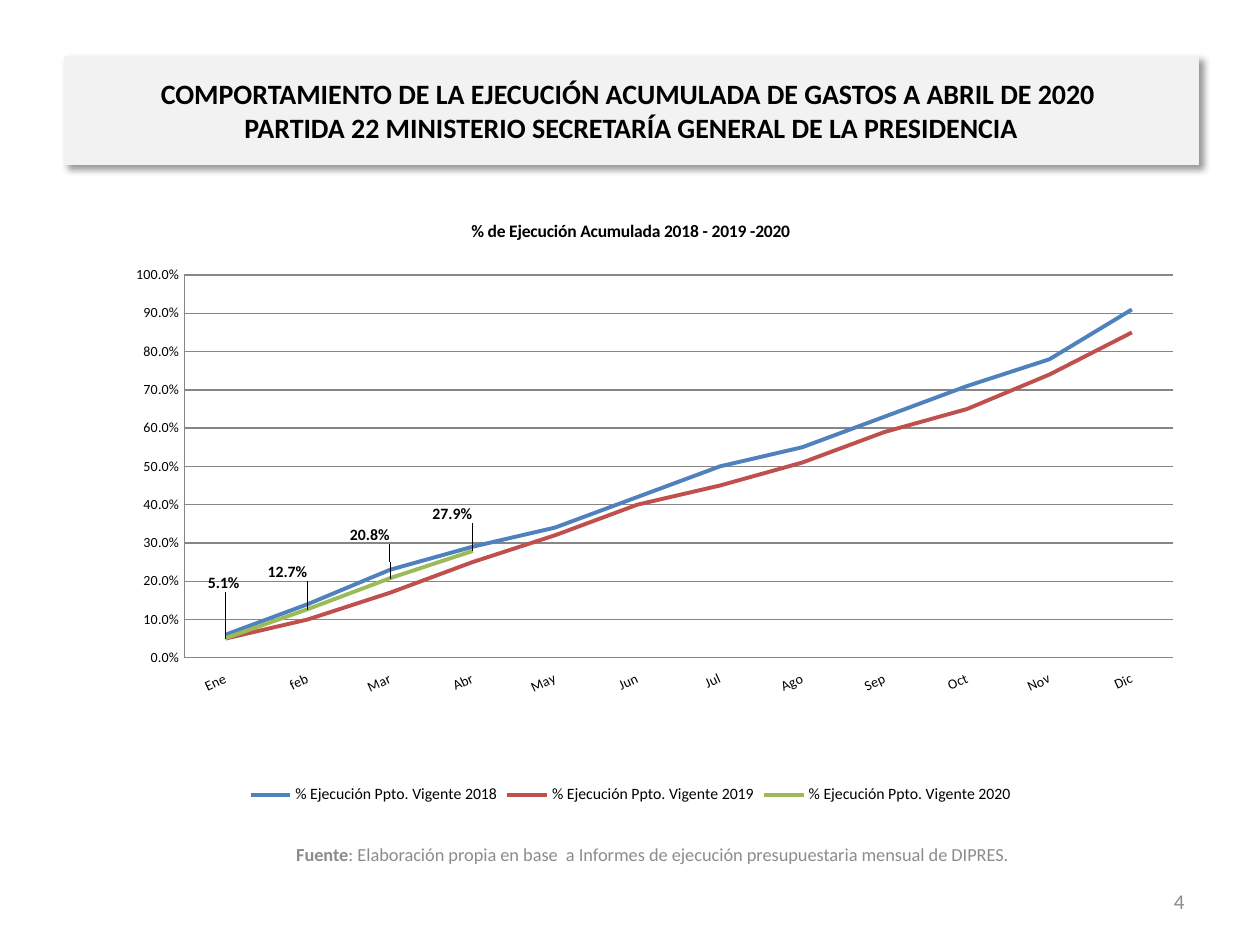
"""Build the slide on accumulated budget execution, 2018 to 2020."""
import dataclasses

import pptx
import pptx.chart.data
import pptx.dml.color
import pptx.enum.chart
import pptx.enum.text
import pptx.oxml
import pptx.oxml.ns
import pptx.util

ALIGN = pptx.enum.text.PP_ALIGN
MIDDLE = pptx.enum.text.MSO_ANCHOR.MIDDLE
WIDTH, HEIGHT = 10, 7.5


@dataclasses.dataclass(frozen=True)
class Theme:
    face: str = "Calibri"
    ink: str = "000000"
    muted: str = "8C8C8C"
    banner: str = "F2F2F2"
    grid: str = "868686"
    lines: tuple = ("4F81BD", "C0504D", "9BBB59")
    title_size: float = 16
    page_size: float = 12
    source_size: float = 10.5
    chart_size: float = 10
    legend_size: float = 9
    axis_size: float = 8


def rgb(code):
    return pptx.dml.color.RGBColor.from_string(code)


def xml(markup):
    return pptx.oxml.parse_xml(markup.replace(">", f" {pptx.oxml.ns.nsdecls('a', 'c')}>", 1))


def descendants(element, *tags):
    return element.findall(".//" + "/".join(pptx.oxml.ns.qn(tag) for tag in tags))


def manual_layout(**values):
    items = "".join(f'<c:{name} val="{value}"/>' for name, value in values.items())
    return xml(f"<c:layout><c:manualLayout>{items}</c:manualLayout></c:layout>")


class SlideBuilder:
    def __init__(self, theme):
        self.theme = theme
        self.deck = pptx.Presentation()
        self.deck.slide_width = pptx.util.Inches(WIDTH)
        self.deck.slide_height = pptx.util.Inches(HEIGHT)
        self.slide = self.deck.slides.add_slide(self.deck.slide_layouts[5])

    def box(self, left, top, width, height):
        across, down = self.deck.slide_width, self.deck.slide_height
        return round(left * across), round(top * down), round(width * across), round(height * down)

    def style(self, font, size, color=None, bold=False):
        font.name, font.size, font.bold = self.theme.face, pptx.util.Pt(size), bold
        font.color.rgb = rgb(color or self.theme.ink)

    def title(self, area, lines):
        banner = self.slide.shapes.title
        banner.left, banner.top, banner.width, banner.height = self.box(*area)
        banner.fill.solid()
        banner.fill.fore_color.rgb = banner.line.color.rgb = rgb(self.theme.banner)
        banner.line.width = pptx.util.Pt(0.75)
        banner.shadow.inherit = False
        descendants(banner.element, "a:effectLst")[0].append(xml(
            '<a:outerShdw blurRad="50800" dist="38100" dir="2700000" algn="tl" rotWithShape="0">'
            '<a:srgbClr val="000000"><a:alpha val="40000"/></a:srgbClr></a:outerShdw>'))
        frame = banner.text_frame
        frame.auto_size = pptx.enum.text.MSO_AUTO_SIZE.NONE
        frame.vertical_anchor = MIDDLE
        frame.text = "\v".join(lines)
        frame.paragraphs[0].alignment = ALIGN.CENTER
        self.style(frame.paragraphs[0].font, self.theme.title_size, bold=True)

    def text(self, area, parts, size, align):
        frame = self.slide.shapes.add_textbox(*self.box(*area)).text_frame
        frame.word_wrap, frame.vertical_anchor = True, MIDDLE
        paragraph = frame.paragraphs[0]
        paragraph.alignment = align
        self.style(paragraph.font, size, self.theme.muted)
        for words, bold in parts:
            run = paragraph.add_run()
            run.text = words
            if bold:
                run.font.bold = True

    def line_chart(self, area, heading, months, executions, label_shifts):
        data = pptx.chart.data.CategoryChartData(number_format="0.0%")
        data.categories = months
        for name, values in executions.items():
            data.add_series(name, values + (None,) * (len(months) - len(values)))
        chart = self.slide.shapes.add_chart(
            pptx.enum.chart.XL_CHART_TYPE.LINE, *self.box(*area), data).chart
        self.style(chart.font, self.theme.chart_size)
        chart.has_title = True
        chart.chart_title.text_frame.text = heading
        self.style(chart.chart_title.text_frame.paragraphs[0].font, self.theme.chart_size, bold=True)
        chart.has_legend = True
        chart.legend.position = pptx.enum.chart.XL_LEGEND_POSITION.BOTTOM
        chart.legend.include_in_layout = False
        self.style(chart.legend.font, self.theme.legend_size)
        self.axes(chart)
        plot = chart.plots[0]
        plot.vary_by_categories = False
        for series, color in zip(plot.series, self.theme.lines):
            series.smooth = False
            series.format.line.color.rgb = rgb(color)
            series.format.line.width = pptx.util.Pt(2.25)
            series.marker.style = pptx.enum.chart.XL_MARKER_STYLE.NONE
        self.point_labels(chart, plot.series[len(executions) - 1], label_shifts)
        plot_area = descendants(chart.element, "c:plotArea")[0]
        for old in plot_area.findall(pptx.oxml.ns.qn("c:layout")):
            plot_area.remove(old)
        plot_area.insert(0, manual_layout(
            layoutTarget="inner", xMode="edge", yMode="edge", x=0.106, y=0.127, w=0.873, h=0.626))

    def axes(self, chart):
        months, shares = chart.category_axis, chart.value_axis
        for axis in (months, shares):
            axis.major_tick_mark = axis.minor_tick_mark = pptx.enum.chart.XL_TICK_MARK.NONE
            axis.format.line.color.rgb = rgb(self.theme.grid)
            self.style(axis.tick_labels.font, self.theme.axis_size)
        months.tick_label_position = pptx.enum.chart.XL_TICK_LABEL_POSITION.LOW
        descendants(chart.element, "c:catAx", "c:txPr", "a:bodyPr")[0].set("rot", "-1500000")
        shares.minimum_scale, shares.maximum_scale, shares.major_unit = 0, 1, 0.1
        shares.has_major_gridlines = True
        shares.major_gridlines.format.line.color.rgb = rgb(self.theme.grid)
        shares.tick_labels.number_format = "0.0%"
        shares.tick_labels.number_format_is_linked = False

    def point_labels(self, chart, series, shifts):
        labels = series.data_labels
        labels.show_value = True
        labels.number_format, labels.number_format_is_linked = "0.0%", False
        self.style(labels.font, self.theme.legend_size, bold=True)
        for index in range(len(shifts)):
            label = series.points[index].data_label
            self.style(label.font, self.theme.legend_size, bold=True)
            label.position = pptx.enum.chart.XL_LABEL_POSITION.RIGHT
        for entry, (x, y) in zip(descendants(chart.element, "c:dLbl"), shifts):
            entry.insert(1, manual_layout(x=x, y=y))


def main():
    theme = Theme()
    builder = SlideBuilder(theme)
    builder.title((0.051, 0.06, 0.9, 0.114), (
        "COMPORTAMIENTO DE LA EJECUCIÓN ACUMULADA DE GASTOS A ABRIL DE 2020 ",
        "PARTIDA 22 MINISTERIO SECRETARÍA GENERAL DE LA PRESIDENCIA"))
    builder.line_chart(
        (0.051, 0.209, 0.899, 0.647),
        "% de Ejecución Acumulada 2018 - 2019 -2020",
        "Ene feb Mar Abr May Jun Jul Ago Sep Oct Nov Dic".split(),
        {
            "% Ejecución Ppto. Vigente 2018":
                (0.06, 0.14, 0.23, 0.29, 0.34, 0.42, 0.5, 0.55, 0.63, 0.71, 0.78, 0.91),
            "% Ejecución Ppto. Vigente 2019":
                (0.05, 0.1, 0.17, 0.25, 0.32, 0.4, 0.45, 0.51, 0.59, 0.65, 0.74, 0.85),
            "% Ejecución Ppto. Vigente 2020": (0.051, 0.127, 0.208, 0.279),
        },
        ((-0.02, -0.09), (-0.04, -0.06), (-0.04, -0.07), (-0.04, -0.06)))
    builder.text((0.106, 0.877, 0.824, 0.053), (
        ("Fuente", True),
        (": Elaboración propia en base  a Informes de ejecución presupuestaria mensual de DIPRES.", False),
    ), theme.source_size, ALIGN.CENTER)
    builder.text((0.717, 0.927, 0.233, 0.053), (("4", False),), theme.page_size, ALIGN.RIGHT)
    builder.deck.save("out.pptx")


if __name__ == "__main__":
    main()
